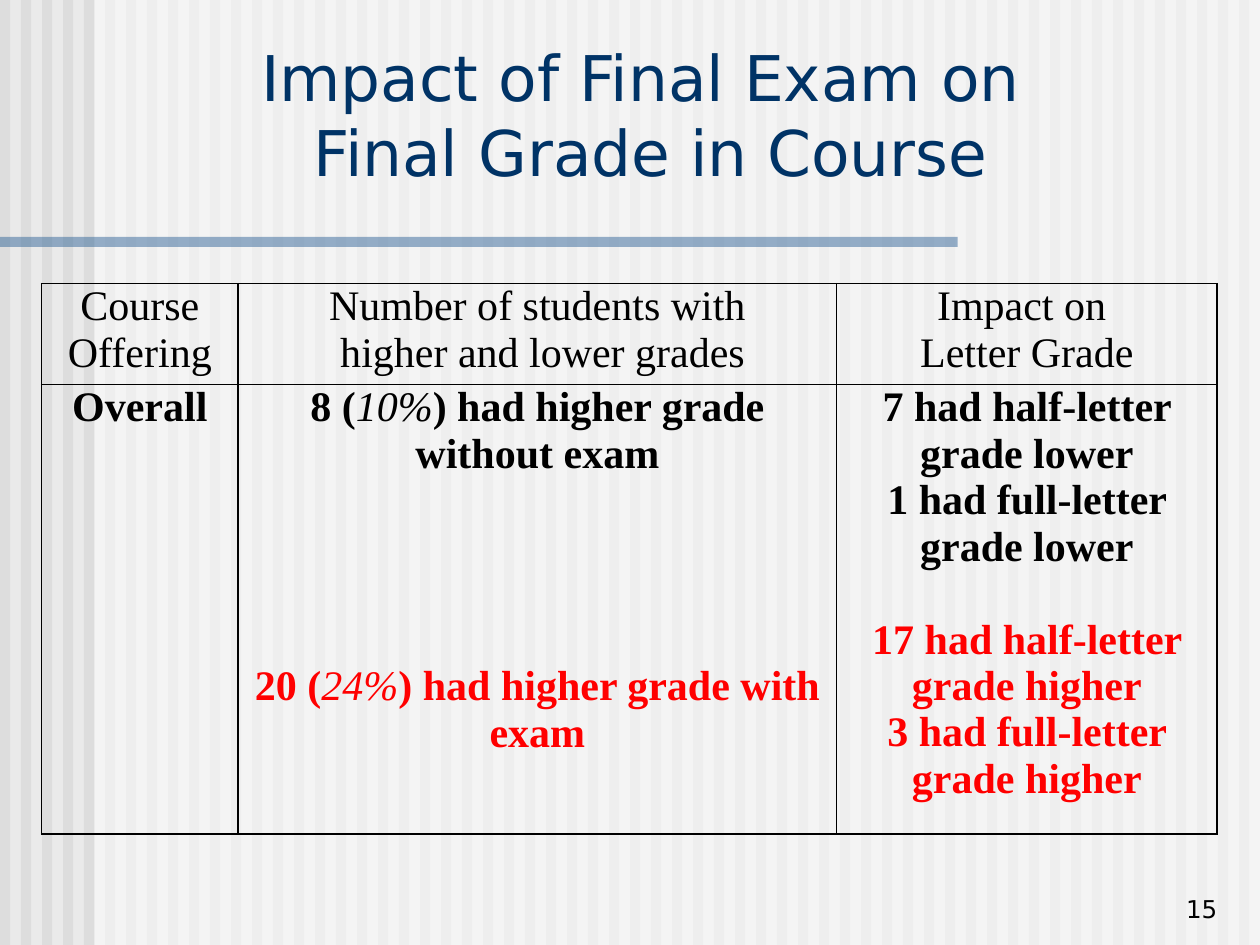
from lxml.etree import SubElement
from pptx import Presentation
from pptx.dml.color import RGBColor
from pptx.enum.shapes import MSO_SHAPE
from pptx.enum.text import MSO_ANCHOR, PP_ALIGN
from pptx.oxml import parse_xml
from pptx.oxml.ns import nsdecls, qn
from pptx.util import Inches, Pt

BLACK, RED, NAVY = "000000", "FF0000", "003366"
BLANK_LINE = 26.6  # points, one line of 24 pt text


def add_span(para, text, size, font, color, bold=False, italic=False):
    span = para.add_run()
    span.text = text
    span.font.size = Pt(size)
    span.font.name = font
    span.font.bold = bold
    span.font.italic = italic
    span.font.color.rgb = RGBColor.from_string(color)


def add_band(shapes, left, top, width, height, color, opacity=100):
    band = shapes.add_shape(MSO_SHAPE.RECTANGLE, Inches(left), Inches(top),
                            Inches(width), Inches(height))
    band.shadow.inherit = False
    band.line.fill.background()
    band.fill.solid()
    band.fill.fore_color.rgb = RGBColor.from_string(color)
    if opacity < 100:
        tint = band.element.spPr.find(f"{qn('a:solidFill')}/{qn('a:srgbClr')}")
        SubElement(tint, qn("a:alpha"), val=str(opacity * 1000))


deck = Presentation()
deck.slide_width, deck.slide_height = Inches(10), Inches(7.5)
slide = deck.slides.add_slide(deck.slide_layouts[5])
slide.background.fill.solid()
slide.background.fill.fore_color.rgb = RGBColor.from_string("EAEAEA")

# Striped background, veil and title rule
stripes = slide.shapes.add_group_shape()
for index in range(60):
    add_band(stripes.shapes, index / 6, 0, 0.08, 7.5, "DDDDDD")
add_band(slide.shapes, 0.75, 0, 9.25, 7.5, "FFFFFF", 50)
add_band(slide.shapes, 0, 1.88, 7.6, 0.08, "336699", 50)

# Title, brought in front of the background
title = slide.shapes.title
title.element.getparent().append(title.element)
title.left, title.top = Inches(0.33), Inches(0.25)
title.width, title.height = Inches(9.67), Inches(1.31)
title.text_frame.vertical_anchor = MSO_ANCHOR.MIDDLE
para = title.text_frame.paragraphs[0]
para.alignment = PP_ALIGN.CENTER
add_span(para, "Impact of Final Exam on ", 36, "DejaVu Sans", NAVY)
para.add_line_break()
add_span(para, "Final Grade in Course", 36, "DejaVu Sans", NAVY)

# Slide number
box = slide.shapes.add_textbox(Inches(7.68), Inches(6.88), Inches(2.08), Inches(0.5))
box.text_frame.word_wrap = True
box.text_frame.vertical_anchor = MSO_ANCHOR.BOTTOM
para = box.text_frame.paragraphs[0]
para.alignment = PP_ALIGN.RIGHT
add_span(para, "15", 14, "DejaVu Sans", BLACK)

# Each paragraph: blank lines before it, colour, then its spans.
# Body spans are bold, except the italic percentages.
rows = [
    [
        [(0, BLACK, ["Course Offering"])],
        [(0, BLACK, ["Number of students with"]),
         (0, BLACK, [" higher and lower grades"])],
        [(0, BLACK, ["Impact on "]), (0, BLACK, ["Letter Grade"])],
    ],
    [
        [(0, BLACK, ["Overall"])],
        [(0, BLACK, ["8 (", "10%", ") had higher grade without exam"]),
         (4, RED, ["20 (", "24%", ") had higher grade with exam"])],
        [(0, BLACK, ["7 had half-letter grade lower"]),
         (0, BLACK, ["1 had full-letter grade lower"]),
         (1, RED, ["17 had half-letter grade higher"]),
         (0, RED, ["3 had full-letter grade higher"])],
    ],
]
table = slide.shapes.add_table(2, 3, Inches(0.33), Inches(2.25),
                               Inches(9.33), Inches(4.06)).table
table.first_row = table.horz_banding = False
for column, width in zip(table.columns, (1.56, 4.75, 3.02)):
    column.width = Inches(width)
for row, height in zip(table.rows, (0.74, 3.32)):
    row.height = Inches(height)

for row_index, row in enumerate(rows):
    for column_index, paragraphs in enumerate(row):
        cell = table.cell(row_index, column_index)
        cell.margin_left = cell.margin_right = Inches(0.07)
        cell.margin_top = cell.margin_bottom = 0
        cell.fill.background()
        for position, side in enumerate(("lnL", "lnR", "lnT", "lnB")):
            border = parse_xml(
                f'<a:{side} {nsdecls("a")} w="12700"><a:solidFill>'
                f'<a:srgbClr val="{BLACK}"/></a:solidFill></a:{side}>')
            cell._tc.get_or_add_tcPr().insert(position, border)
        for index, (blank_lines, color, spans) in enumerate(paragraphs):
            frame = cell.text_frame
            para = frame.add_paragraph() if index else frame.paragraphs[0]
            para.alignment = PP_ALIGN.CENTER
            para.space_before = Pt(blank_lines * BLANK_LINE)
            for text in spans:
                percentage = text.endswith("%")
                add_span(para, text, 24, "Times New Roman", color,
                         bold=row_index > 0 and not percentage, italic=percentage)

deck.save("out.pptx")
